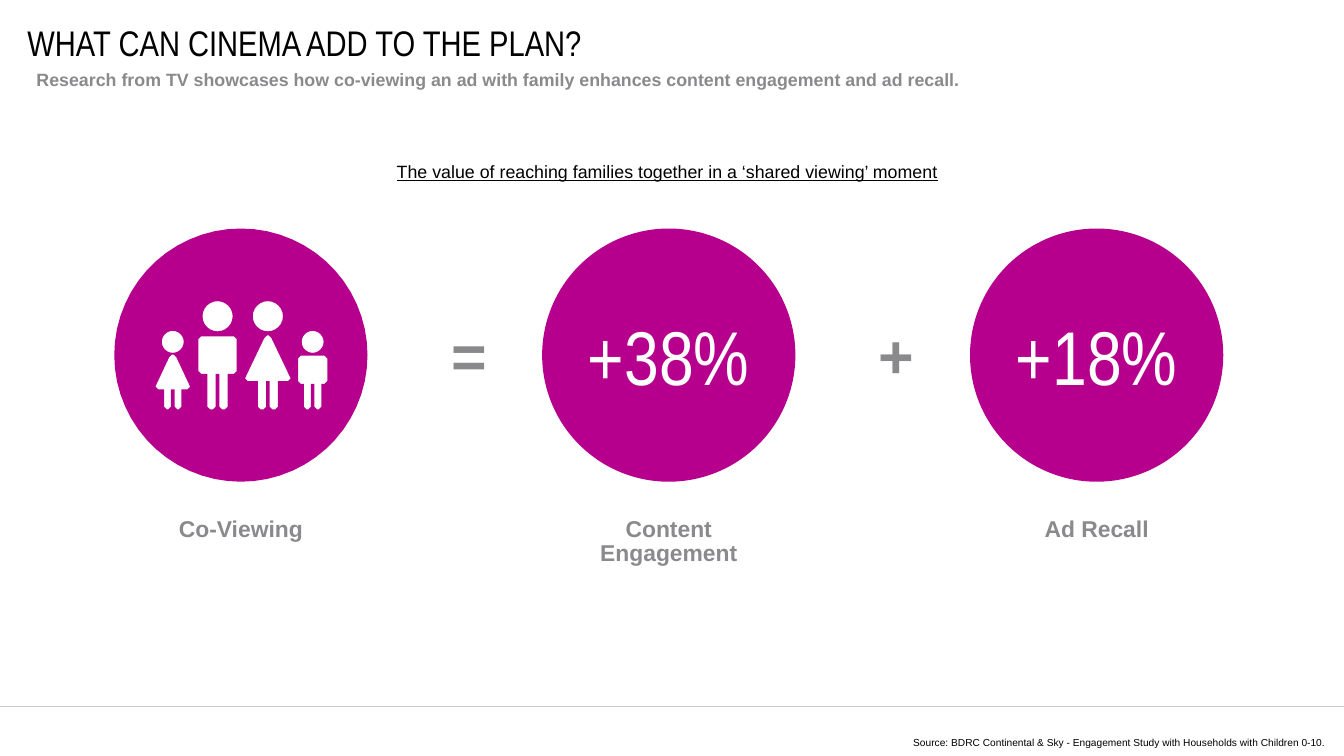
from math import cos, pi, sin

from lxml import etree
from pptx import Presentation
from pptx import util as u
from pptx.dml.color import RGBColor
from pptx.enum import shapes, text
from pptx.oxml.ns import qn

COLORS = {"magenta": "B6008D", "grey": "8A8A8D", "rule": "CAC8C8",
          "black": "000000", "white": "FFFFFF"}
WIDTH, HEIGHT = 14.7, 8.27
MARGIN = 0.3
DIAMETER = 2.77
PITCH = 4.68  # distance between the centres of two circles
FIRST_CENTRE = 2.635
LEFT, CENTRE, RIGHT = text.PP_ALIGN.LEFT, text.PP_ALIGN.CENTER, text.PP_ALIGN.RIGHT

# Family members in hundredths of an inch from the centre of the circle:
# middle, head centre, head radius, body top, body bottom, shoulder, hip, leg outside
FAMILY = [
    (-74.5, -14.5, 12, -0.5, 37.5, 4, 19, 9.5),
    (-25.5, -42.5, 16.5, -20.5, 20.5, 21, 21, 11),
    (29.5, -42.5, 16.5, -21.5, 28.5, 4, 25, 11),
    (78.5, -14.5, 12, 0.5, 31.5, 16, 16, 9.5),
]
FEET = 59.5


def write(frame, content, size, color, align=LEFT, font="Arial", bold=None,
          underline=None, leading=None):
    frame.text = content
    for para in frame.paragraphs:
        para.alignment = align
        if leading:
            para.line_spacing = u.Pt(leading)
        for span in para.runs:
            span.font.size = u.Pt(size)
            span.font.name = font
            span.font.bold = bold
            span.font.underline = underline
            span.font.color.rgb = RGBColor.from_string(COLORS[color])


def add_text(page, box, content, size, color, inset=True, wrap=True, middle=False, **style):
    frame = page.shapes.add_textbox(*map(u.Inches, box)).text_frame
    frame.word_wrap = wrap
    if not inset:
        frame.margin_left = frame.margin_right = frame.margin_top = frame.margin_bottom = 0
    frame.vertical_anchor = text.MSO_ANCHOR.MIDDLE if middle else text.MSO_ANCHOR.TOP
    write(frame, content, size, color, **style)


def paint(shape):
    shape.shadow.inherit = False
    shape.fill.solid()
    shape.fill.fore_color.rgb = RGBColor.from_string(COLORS["magenta"])
    shape.line.fill.background()


def ring(x, y, radius, sides):
    return [(x + radius * sin(2 * pi * i / sides), y - radius * cos(2 * pi * i / sides))
            for i in range(sides)]


def body(middle, top, bottom, shoulder, hip, leg):
    """Outline of a body: the right half, then its mirror image."""
    cut, gap = 3, 2
    half = [(shoulder - cut, top), (shoulder, top + cut), (hip, bottom - cut),
            (hip - cut, bottom), (leg, bottom), (leg, FEET - cut), (leg - cut, FEET),
            (gap + cut, FEET), (gap, FEET - cut), (gap, bottom)]
    return [(middle + x, y) for x, y in half] + [(middle - x, y) for x, y in reversed(half)]


def add_family(page, box):
    """Disc with the four figures cut out of it."""
    left, top, width, height = box
    outlines = [ring(0, 0, width * 50, 60)]
    for middle, head, radius, *trunk in FAMILY:
        outlines += [ring(middle, head, radius, 24), body(middle, *trunk)]
    centre_x, centre_y = left + width / 2, top + height / 2
    builder = None
    for outline in outlines:
        points = [(u.Inches(centre_x + x / 100), u.Inches(centre_y + y / 100))
                  for x, y in outline]
        if builder is None:
            builder = page.shapes.build_freeform(*points[0], scale=1.0)
        else:
            builder.move_to(*points[0])
        builder.add_line_segments(points[1:], close=True)
    paint(builder.convert_to_shape())


def add_figure_disc(page, box, content):
    disc = page.shapes.add_shape(shapes.MSO_SHAPE.OVAL, *map(u.Inches, box))
    paint(disc)
    frame = disc.text_frame
    frame.margin_left = frame.margin_right = frame.margin_top = frame.margin_bottom = 0
    frame.vertical_anchor = text.MSO_ANCHOR.MIDDLE
    frame.word_wrap = True
    write(frame, content, 60, "white", align=CENTRE, font="Arial Narrow")


def add_heading(page, left, top, width):
    add_text(page, (left, top, width, 0.32), "WHAT CAN CINEMA ADD TO THE PLAN?", 28, "black",
             inset=False, wrap=False, middle=True, font="Arial Narrow")
    add_text(page, (left, top + 0.43, width, 0.48),
             "Research from TV showcases how co-viewing an ad with family enhances "
             "content engagement and ad recall.", 14, "grey", bold=True, leading=15)


def add_equation(page, top):
    add_text(page, (1.21, top - 0.72, 12.18, 0.48),
             "The value of reaching families together in a ‘shared viewing’ moment",
             14, "black", inset=False, align=CENTRE, underline=True, leading=15)
    columns = [(None, "Co-Viewing", "="), ("+38%", "Content\nEngagement", "+"),
               ("+18%", "Ad Recall", None)]
    for index, (figure, label, operator) in enumerate(columns):
        centre = FIRST_CENTRE + index * PITCH
        box = (centre - DIAMETER / 2, top, DIAMETER, DIAMETER)
        if figure:
            add_figure_disc(page, box, figure)
        else:
            add_family(page, box)
        add_text(page, (centre - 1.43, top + 3.12, 2.86, 0.3 * len(label.split("\n"))),
                 label, 18, "grey", align=CENTRE, bold=True, leading=19)
        if operator:
            add_text(page, (centre + PITCH / 2 - 0.14, top + 0.93, 0.28, 0.9), operator, 48,
                     "grey", wrap=False, align=CENTRE, bold=True)


def add_footer(page, top):
    rule = page.shapes.add_connector(shapes.MSO_CONNECTOR.STRAIGHT, 0, u.Inches(top),
                                     u.Inches(WIDTH), u.Inches(top))
    rule.line.color.rgb = RGBColor.from_string(COLORS["rule"])
    rule.line.width = u.Pt(0.5)
    etree.SubElement(rule._element.spPr, qn("a:effectLst"))
    add_text(page, (9.39, top + 0.2, 5.11, 0.26),
             "Source: BDRC Continental & Sky - Engagement Study with Households with "
             "Children 0-10.", 8, "black", inset=False, middle=True, align=RIGHT, leading=19)


def main():
    deck = Presentation()
    deck.slide_width, deck.slide_height = u.Inches(WIDTH), u.Inches(HEIGHT)
    page = deck.slides.add_slide(deck.slide_layouts[6])
    add_footer(page, 7.73)
    add_heading(page, MARGIN, 0.3, 13.58)
    add_equation(page, 2.5)
    deck.save("out.pptx")


if __name__ == "__main__":
    main()
